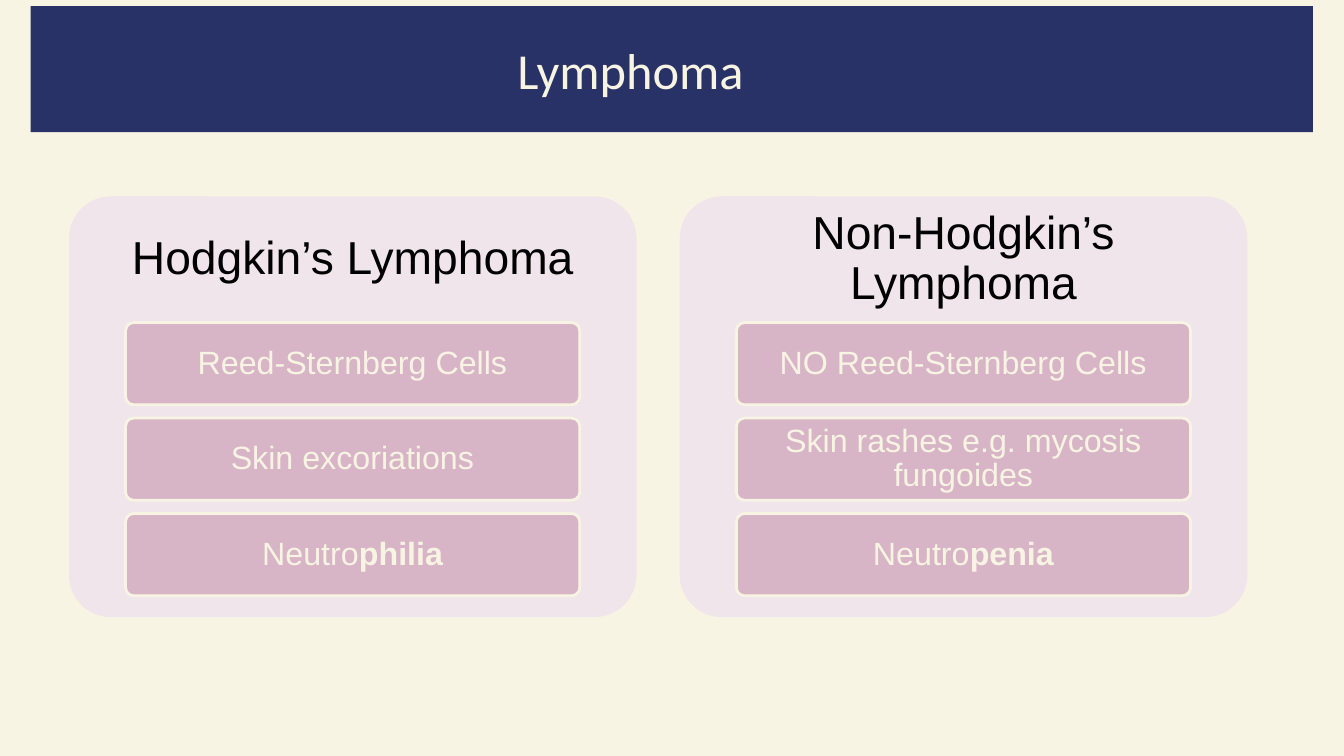
from pptx import Presentation
from pptx.dml.color import RGBColor
from pptx.enum import shapes as sh, text as tx
from pptx.util import Pt

CREAM = RGBColor(0xF8, 0xF4, 0xE4)
NAVY = RGBColor(0x29, 0x32, 0x67)
BLUSH = RGBColor(0xF0, 0xE5, 0xEA)
ROSE = RGBColor(0xD7, 0xB5, 0xC6)
BLACK = RGBColor(0, 0, 0)

TITLE = {"name": "Calibri", "size": Pt(36), "bold": False}
HEAD = {"name": "Arial", "size": Pt(33), "bold": False}
ITEM = {"name": "Arial", "size": Pt(23), "bold": False}

GROUPS = [
    ("Hodgkin’s Lymphoma",
     [("Reed-Sternberg Cells",), ("Skin excoriations",), ("Neutro", "philia")]),
    ("Non-Hodgkin’s Lymphoma",
     [("NO Reed-Sternberg Cells",), ("Skin rashes e.g. mycosis fungoides",),
      ("Neutro", "penia")]),
]


def style(target, values):
    for key, value in values.items():
        setattr(target, key, value)


class Deck:
    def __init__(self):
        self.prs = Presentation()
        style(self.prs, {"slide_width": Pt(960), "slide_height": Pt(540)})
        self.slide = self.prs.slides.add_slide(self.prs.slide_layouts[5])
        fill = self.slide.background.fill
        fill.solid()
        fill.fore_color.rgb = CREAM

    def label(self, shape, parts, font, color, pad, anchor, space=0.9):
        frame = shape.text_frame
        side, edge = Pt(pad[0]), Pt(pad[1])
        style(frame, {"word_wrap": True, "auto_size": tx.MSO_AUTO_SIZE.NONE,
                      "vertical_anchor": anchor,
                      "margin_left": side, "margin_right": side,
                      "margin_top": edge, "margin_bottom": edge})
        para = frame.paragraphs[0]
        style(para, {"alignment": tx.PP_ALIGN.CENTER, "line_spacing": space})
        for index, part in enumerate(parts):
            run = para.add_run()
            run.text = part
            style(run.font, font)
            run.font.color.rgb = color
            if index:
                run.font.bold = True

    def block(self, kind, box, color, edge=None):
        shape = self.slide.shapes.add_shape(kind, *map(Pt, box))
        shape.shadow.inherit = False
        shape.fill.solid()
        shape.fill.fore_color.rgb = color
        if edge is None:
            shape.line.fill.background()
        else:
            shape.line.color.rgb = edge
            shape.line.width = Pt(2)
        if kind == sh.MSO_SHAPE.ROUNDED_RECTANGLE:
            shape.adjustments[0] = 0.1
        return shape

    def title(self, words, bar, box):
        band = self.block(sh.MSO_SHAPE.RECTANGLE, bar, NAVY)
        title = self.slide.shapes.title
        band.element.addnext(title.element)
        style(title, dict(zip(("left", "top", "width", "height"), map(Pt, box))))
        self.label(title, [words], TITLE, CREAM, (7.2, 3.6),
                   tx.MSO_ANCHOR.TOP, 1.0)

    def panel(self, left, head, items):
        top, width = 140.2, 405.5
        self.block(sh.MSO_SHAPE.ROUNDED_RECTANGLE,
                   (left, top, width, 300.6), BLUSH)
        text = self.slide.shapes.add_textbox(*map(Pt, (left, top, width, 90.2)))
        self.label(text, [head], HEAD, BLACK, (10, 10), tx.MSO_ANCHOR.MIDDLE)
        for row, parts in enumerate(items):
            box = (left + 40.5, 230.4 + row * 68.2, 324.5, 58.8)
            card = self.block(sh.MSO_SHAPE.ROUNDED_RECTANGLE, box, ROSE, CREAM)
            self.label(card, parts, ITEM, CREAM, (4.6, 3.5),
                       tx.MSO_ANCHOR.MIDDLE)


def main():
    deck = Deck()
    deck.title("Lymphoma", (21.9, 4.4, 916, 90), (202, 24.5, 496.8, 51.1))
    for col, (head, items) in enumerate(GROUPS):
        deck.panel(49.2 + col * 436.3, head, items)
    deck.prs.save("out.pptx")


if __name__ == "__main__":
    main()
